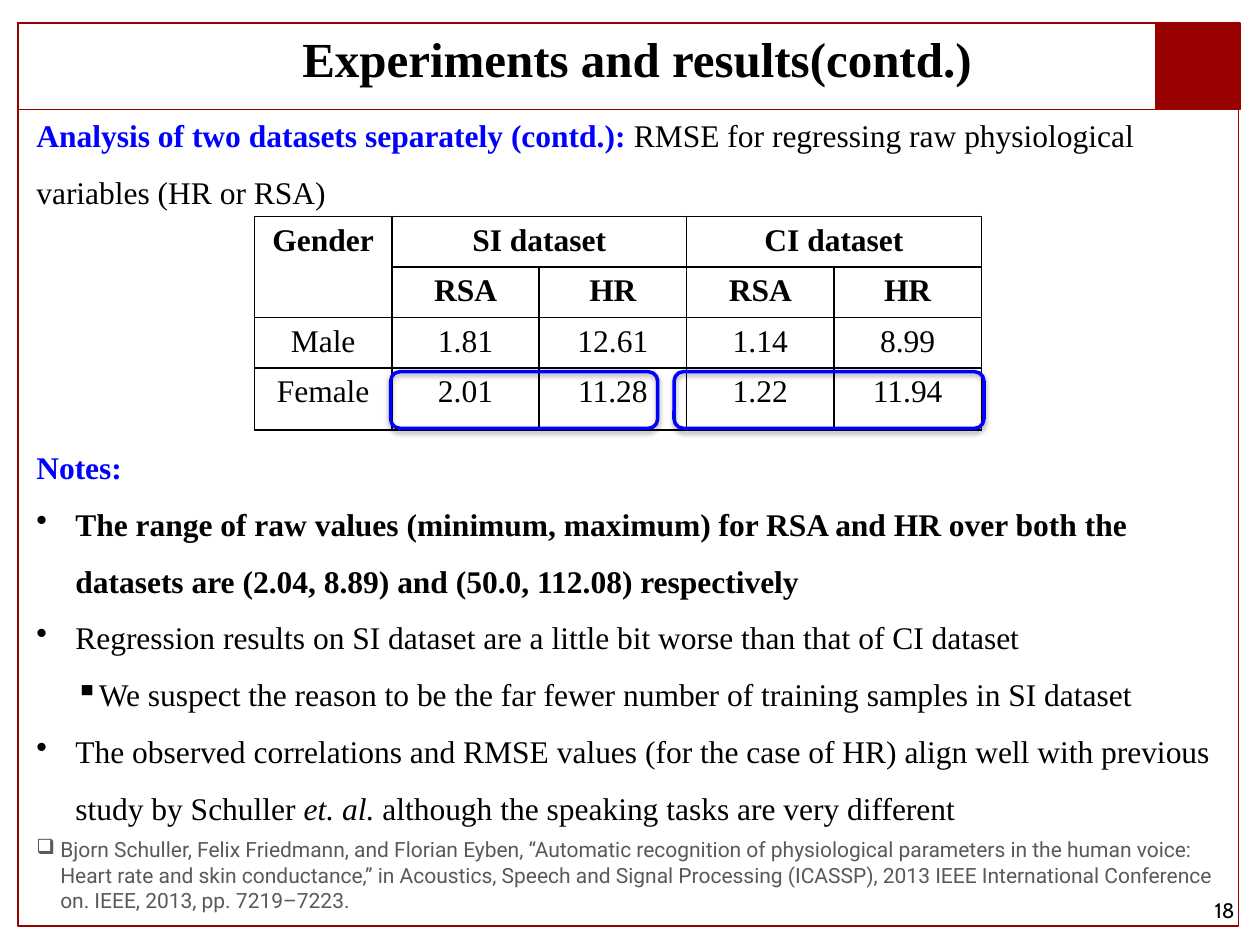
from lxml.etree import SubElement
from pptx import Presentation
from pptx.dml.color import RGBColor
from pptx.enum.shapes import MSO_SHAPE as Shape
from pptx.enum.text import MSO_ANCHOR as Anchor, PP_ALIGN as Align
from pptx.oxml import parse_xml
from pptx.oxml.ns import nsdecls, qn
from pptx.util import Inches, Pt

WIDTH, HEIGHT = Inches(10), Inches(7.5)
COLORS = {"frame": "990000", "accent": "0000FF", "text": "000000", "citation": "595959"}
SERIF, SANS, NUMERAL = "Times New Roman", "Roboto", "Cabin"


def color(name):
    """Return the named palette colour."""
    return RGBColor.from_string(COLORS[name])


def across(percent):
    """Return a percentage of the slide width."""
    return int(WIDTH * percent / 100)


def down(percent):
    """Return a percentage of the slide height."""
    return int(HEIGHT * percent / 100)


def area(left, top, width, height):
    """Return a box given in percentages of the slide size."""
    return across(left), down(top), across(width), down(height)


def add_run(paragraph, text, size=18, font=SERIF, ink="text", bold=False, italic=False):
    """Append formatted text to a paragraph."""
    run = paragraph.add_run()
    run.text = text
    run.font.size, run.font.name = Pt(size), font
    run.font.bold, run.font.italic = bold, italic
    run.font.color.rgb = color(ink)


def set_bullet(paragraph, symbol, left, hanging):
    """Give a paragraph a bullet with a hanging indent."""
    properties = paragraph._p.get_or_add_pPr()
    properties.set("marL", str(across(left)))
    properties.set("indent", str(-across(hanging)))
    SubElement(properties, qn("a:buChar"), char=symbol)


def add_text(slide, box, paragraphs, align=Align.LEFT, anchor=Anchor.TOP, inset=0.1):
    """Add a text box from (runs, layout) pairs."""
    frame = slide.shapes.add_textbox(*area(*box)).text_frame
    frame.word_wrap, frame.vertical_anchor = True, anchor
    frame.margin_left = frame.margin_right = Inches(inset)
    for number, (runs, layout) in enumerate(paragraphs):
        paragraph = frame.add_paragraph() if number else frame.paragraphs[0]
        if "bullet" in layout:
            set_bullet(paragraph, *layout["bullet"])
        paragraph.alignment = align
        paragraph.line_spacing = layout.get("spacing", 1.0)
        paragraph.space_after = Pt(layout.get("after", 0))
        for text, style in runs:
            add_run(paragraph, text, **style)


def add_box(slide, kind, box, outline, weight, fill=None):
    """Add an outlined shape with an optional fill."""
    shape = slide.shapes.add_shape(kind, *area(*box))
    shape.shadow.inherit = False
    shape.line.color.rgb, shape.line.width = color(outline), Pt(weight)
    if fill:
        shape.fill.solid()
        shape.fill.fore_color.rgb = color(fill)
    else:
        shape.fill.background()
    return shape


def add_highlight(slide, left, width):
    """Ring part of the last table row with a softly shadowed outline."""
    ring = add_box(slide, Shape.ROUNDED_RECTANGLE, (left, 39.33, width, 6), "accent", 2)
    effects = ring._element.spPr.find(qn("a:effectLst"))
    effects.append(parse_xml(
        f'<a:outerShdw {nsdecls("a")} blurRad="{Pt(3)}" dist="{Pt(1.8)}" dir="5400000" '
        f'rotWithShape="0"><a:srgbClr val="{COLORS["text"]}"><a:alpha val="35000"/>'
        '</a:srgbClr></a:outerShdw>'))


def set_borders(cell):
    """Draw a thin line on each side of a cell."""
    properties = cell._tc.get_or_add_tcPr()
    for position, side in enumerate("LRTB"):
        properties.insert(position, parse_xml(
            f'<a:ln{side} {nsdecls("a")} w="{Pt(1)}"><a:solidFill>'
            f'<a:srgbClr val="{COLORS["text"]}"/></a:solidFill></a:ln{side}>'))


def add_results(slide):
    """Add the table of errors by gender and dataset."""
    rows = [
        ["Gender", "SI dataset", "", "CI dataset", ""],
        ["", "RSA", "HR", "RSA", "HR"],
        ["Male", "1.81", "12.61", "1.14", "8.99"],
        ["Female", "2.01", "11.28", "1.22", "11.94"],
    ]
    table = slide.shapes.add_table(4, 5, *area(20.2, 22.93, 57.7, 22.53)).table
    for column, share in zip(table.columns, [10.9] + [11.7] * 4):
        column.width = across(share)
    for row, share in zip(table.rows, [5.33] * 3 + [6.54]):
        row.height = down(share)
    for r, values in enumerate(rows):
        for c, value in enumerate(values):
            cell = table.cell(r, c)
            cell.fill.background()
            set_borders(cell)
            if value:
                paragraph = cell.text_frame.paragraphs[0]
                paragraph.alignment = Align.CENTER
                add_run(paragraph, value, bold=r < 2)
    for first, last in [((0, 0), (1, 0)), ((0, 1), (0, 2)), ((0, 3), (0, 4))]:
        table.cell(*first).merge(table.cell(*last))


def add_frame(slide):
    """Add the page frame, title band and corner block."""
    add_box(slide, Shape.RECTANGLE, (1.4, 2.4, 96.9, 95.6), "frame", 1)
    add_box(slide, Shape.RECTANGLE, (1.4, 2.4, 96.9, 9.2), "frame", 1)
    add_box(slide, Shape.RECTANGLE, (91.7, 2.4, 6.7, 9.2), "frame", 1, "frame")


def add_notes(slide):
    """Add the findings and the cited study."""
    heading = {"ink": "accent", "bold": True}
    point = {"bullet": ("•", 3.1, 3.1), "spacing": 1.5}
    subpoint = {"bullet": ("▪", 4.5, 1.4), "spacing": 1.5}
    source = {"bullet": ("❑", 1.9, 1.9), "after": 6}
    add_text(slide, (1.9, 46.8, 96.7, 50.93), [
        ([("Notes:", heading)], {}),
        ([("The range of raw values (minimum, maximum) for RSA and HR over both the datasets "
           "are (2.04, 8.89) and (50.0, 112.08) respectively", {"bold": True})], point),
        ([("Regression results on SI dataset are a little bit worse than that of CI dataset",
           {})], point),
        ([("We suspect the reason to be the far fewer number of training samples in SI dataset",
           {})], subpoint),
        ([("The observed correlations and RMSE values (for the case of HR) align well with "
           "previous study by Schuller ", {}),
          ("et. al.", {"italic": True}),
          (" although the speaking tasks are very different", {})], {**point, "after": 6}),
        ([("Bjorn Schuller, Felix Friedmann, and Florian Eyben, “Automatic recognition of "
           "physiological parameters in the human voice: Heart rate and skin conductance,” in "
           "Acoustics, Speech and Signal Processing (ICASSP), 2013 IEEE International "
           "Conference on. IEEE, 2013, pp. 7219–7223.",
           {"size": 12, "font": SANS, "ink": "citation"})], source),
    ])


def main():
    """Build and save the slide."""
    deck = Presentation()
    deck.slide_width, deck.slide_height = WIDTH, HEIGHT
    slide = deck.slides.add_slide(deck.slide_layouts[6])
    add_frame(slide)
    add_text(slide, (23.1, 2.4, 54.9, 9.2),
             [([("Experiments and results(contd.)", {"size": 28, "bold": True})], {})],
             align=Align.CENTER, inset=0.05)
    add_text(slide, (75.2, 93.6, 23.3, 5.33),
             [([("18", {"size": 12, "font": NUMERAL})], {})],
             align=Align.RIGHT, anchor=Anchor.MIDDLE, inset=0.05)
    add_text(slide, (1.9, 9.6, 97.9, 35.73), [
        ([("Analysis of two datasets separately (contd.): ", {"ink": "accent", "bold": True}),
          ("RMSE for regressing raw physiological variables (HR or RSA)", {})],
         {"spacing": 1.5})])
    add_results(slide)
    add_notes(slide)
    add_highlight(slide, 31, 21.2)
    add_highlight(slide, 53.5, 24.6)
    deck.save("out.pptx")


if __name__ == "__main__":
    main()
